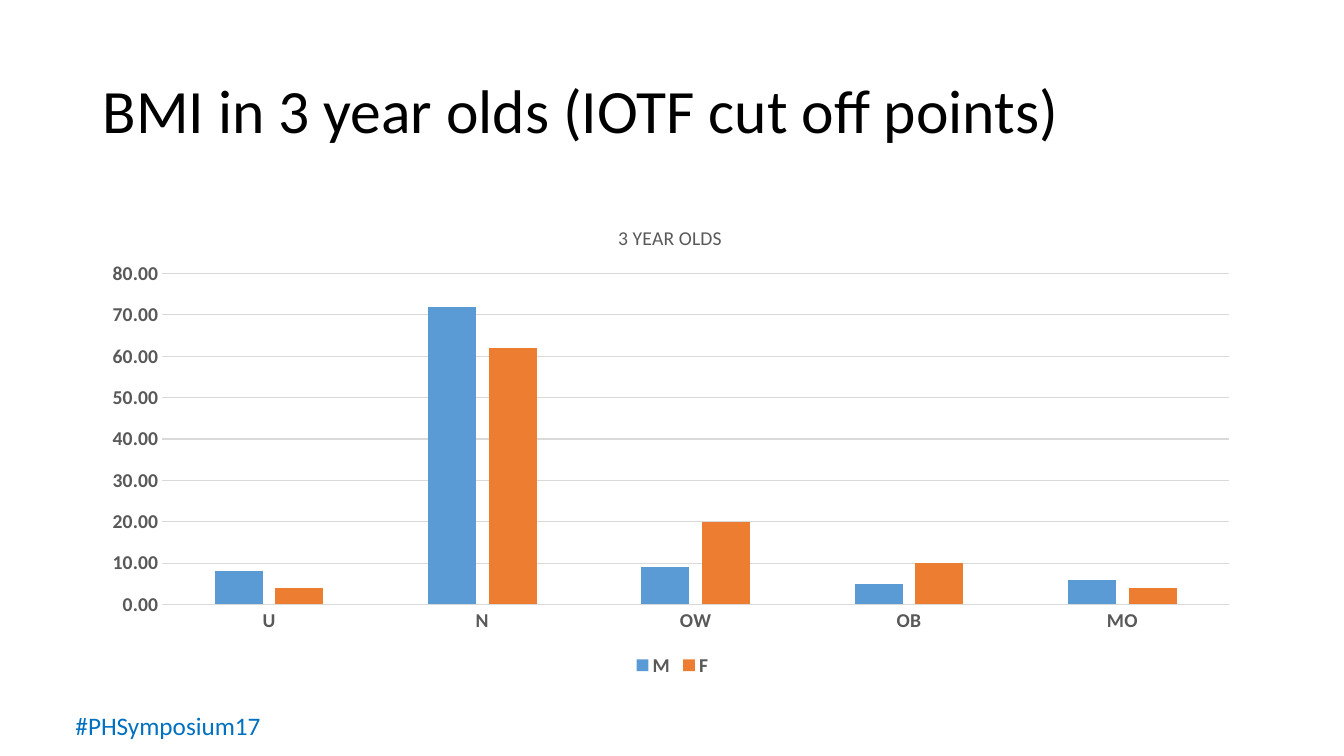
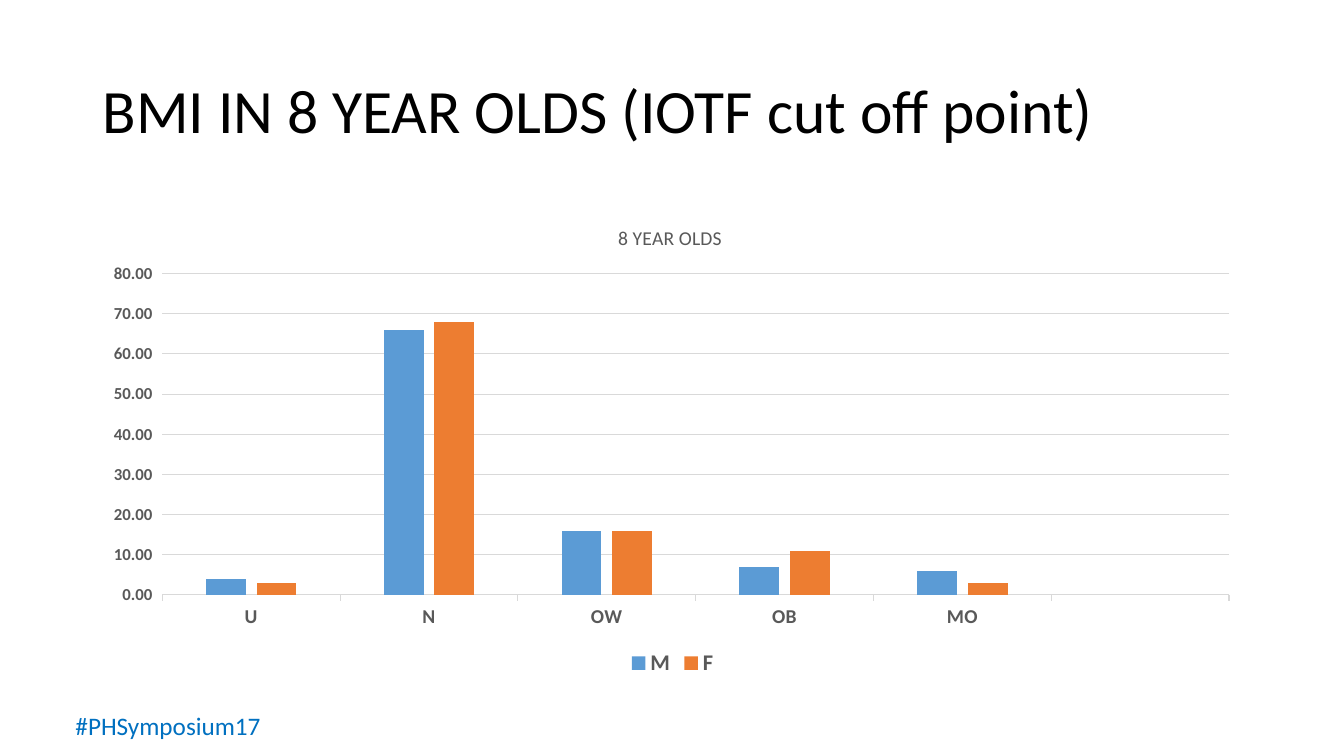
from dataclasses import dataclass

from lxml import etree
from pptx import Presentation
from pptx import util as u
from pptx.chart import data as chart_data
from pptx.dml import color
from pptx.enum import chart as chart_enum
from pptx.enum import text
from pptx.oxml import ns


@dataclass(frozen=True)
class Theme:
    font: str = "Calibri"
    title_color: str = "000000"
    footer_color: str = "0070C0"
    label_color: str = "595959"
    line_color: str = "D9D9D9"
    series_colors: tuple[str, ...] = ("5B9BD5", "ED7D31")
    title_size: int = 44
    footer_size: int = 18
    chart_title_size: int = 14
    category_size: int = 14


@dataclass(frozen=True)
class Box:
    left: float
    top: float
    width: float
    height: float

    def lengths(self) -> tuple[u.Length, ...]:
        return tuple(u.Inches(n) for n in (self.left, self.top, self.width, self.height))


@dataclass(frozen=True)
class BmiSlide:
    title: str
    chart_title: str
    categories: tuple[str, ...]
    male: tuple[float | None, ...]
    female: tuple[float | None, ...]
    tick: chart_enum.XL_TICK_MARK
    value_size: int
    legend_size: int
    plot_height: float


THEME = Theme()
TITLE_BOX = Box(0.92, 0.4, 11.5, 1.45)
CHART_BOX = Box(0.92, 2, 11.5, 4.76)
FOOTER_BOX = Box(0.65, 7, 3.58, 0.4)
FOOTER = "#PHSymposium17"
GROUPS = ("U", "N", "OW", "OB", "MO")

SLIDES = (
    BmiSlide(
        "BMI in 3 year olds (IOTF cut off points)", "3 YEAR OLDS", GROUPS,
        male=(8, 72, 9, 5, 6), female=(4, 62, 20, 10, 4),
        tick=chart_enum.XL_TICK_MARK.NONE, value_size=14, legend_size=14, plot_height=0.69,
    ),
    BmiSlide(
        "BMI IN 8 YEAR OLDS (IOTF cut off point)", "8 YEAR OLDS", GROUPS + ("",),
        male=(4, 66, 16, 7, 6, None), female=(3, 68, 16, 11, 3, None),
        tick=chart_enum.XL_TICK_MARK.OUTSIDE, value_size=12, legend_size=16, plot_height=0.67,
    ),
)


def rgb(value: str) -> color.RGBColor:
    return color.RGBColor.from_string(value)


def style_font(font, *, size: int, fill: str, bold: bool = False) -> None:
    font.name = THEME.font
    font.size = u.Pt(size)
    font.bold = bold
    font.color.rgb = rgb(fill)


def add_text(slide, box: Box, content: str, *, size: int, fill: str,
             anchor=text.MSO_ANCHOR.TOP, line_spacing: float = 1.0) -> None:
    frame = slide.shapes.add_textbox(*box.lengths()).text_frame
    frame.word_wrap = True
    frame.vertical_anchor = anchor
    paragraph = frame.paragraphs[0]
    paragraph.line_spacing = line_spacing
    run = paragraph.add_run()
    run.text = content
    style_font(run.font, size=size, fill=fill)


def set_layout(parent, **settings: str | float) -> None:
    """Place a chart part by fractions of the chart area."""
    layout = parent.find(ns.qn("c:layout"))
    if layout is None:
        layout = etree.Element(ns.qn("c:layout"))
        after_text = parent.find(ns.qn("c:tx")) is not None
        parent.insert(1 if after_text else 0, layout)
    for child in list(layout):
        layout.remove(child)
    manual = etree.SubElement(layout, ns.qn("c:manualLayout"))
    for name, value in settings.items():
        etree.SubElement(manual, ns.qn(f"c:{name}")).set("val", str(value))


def style_line(line) -> None:
    line.color.rgb = rgb(THEME.line_color)
    line.width = u.Pt(0.75)


def style_axes(chart, content: BmiSlide) -> None:
    category_axis, value_axis = chart.category_axis, chart.value_axis
    for axis, size in ((category_axis, THEME.category_size), (value_axis, content.value_size)):
        axis.major_tick_mark = content.tick
        axis.minor_tick_mark = chart_enum.XL_TICK_MARK.NONE
        style_font(axis.tick_labels.font, size=size, fill=THEME.label_color, bold=True)
    style_line(category_axis.format.line)
    value_axis.format.line.fill.background()
    value_axis.minimum_scale, value_axis.maximum_scale, value_axis.major_unit = 0, 80, 10
    value_axis.has_major_gridlines = True
    style_line(value_axis.major_gridlines.format.line)
    value_axis.tick_labels.number_format = "0.00"
    value_axis.tick_labels.number_format_is_linked = False


def add_bmi_chart(slide, content: BmiSlide) -> None:
    data = chart_data.CategoryChartData(number_format="0.00")
    data.categories = content.categories
    data.add_series("M", content.male)
    data.add_series("F", content.female)
    chart = slide.shapes.add_chart(
        chart_enum.XL_CHART_TYPE.COLUMN_CLUSTERED, *CHART_BOX.lengths(), data).chart
    style_font(chart.font, size=10, fill=THEME.title_color)

    plot = chart.plots[0]
    plot.gap_width, plot.overlap = 219, -27
    plot.vary_by_categories = False
    for series, fill in zip(plot.series, THEME.series_colors):
        series.format.fill.solid()
        series.format.fill.fore_color.rgb = rgb(fill)

    style_axes(chart, content)

    chart.has_title = True
    run = chart.chart_title.text_frame.paragraphs[0].add_run()
    run.text = content.chart_title
    style_font(run.font, size=THEME.chart_title_size, fill=THEME.label_color)

    chart.has_legend = True
    chart.legend.position = chart_enum.XL_LEGEND_POSITION.BOTTOM
    chart.legend.include_in_layout = False
    style_font(chart.legend.font, size=content.legend_size, fill=THEME.label_color, bold=True)

    set_layout(chart.chart_title._element, xMode="edge", yMode="edge", x=0.45, y=0.04)
    set_layout(plot._element.getparent(), layoutTarget="inner", xMode="edge", yMode="edge",
               x=0.06, y=0.15, w=0.92, h=content.plot_height)


def add_bmi_slide(presentation, content: BmiSlide) -> None:
    slide = presentation.slides.add_slide(presentation.slide_layouts[6])
    add_text(slide, FOOTER_BOX, FOOTER, size=THEME.footer_size, fill=THEME.footer_color)
    add_text(slide, TITLE_BOX, content.title, size=THEME.title_size, fill=THEME.title_color,
             anchor=text.MSO_ANCHOR.MIDDLE, line_spacing=0.9)
    add_bmi_chart(slide, content)


def main() -> None:
    presentation = Presentation()
    presentation.slide_width, presentation.slide_height = u.Inches(13.33), u.Inches(7.5)
    for content in SLIDES:
        add_bmi_slide(presentation, content)
    presentation.save("out.pptx")


if __name__ == "__main__":
    main()
